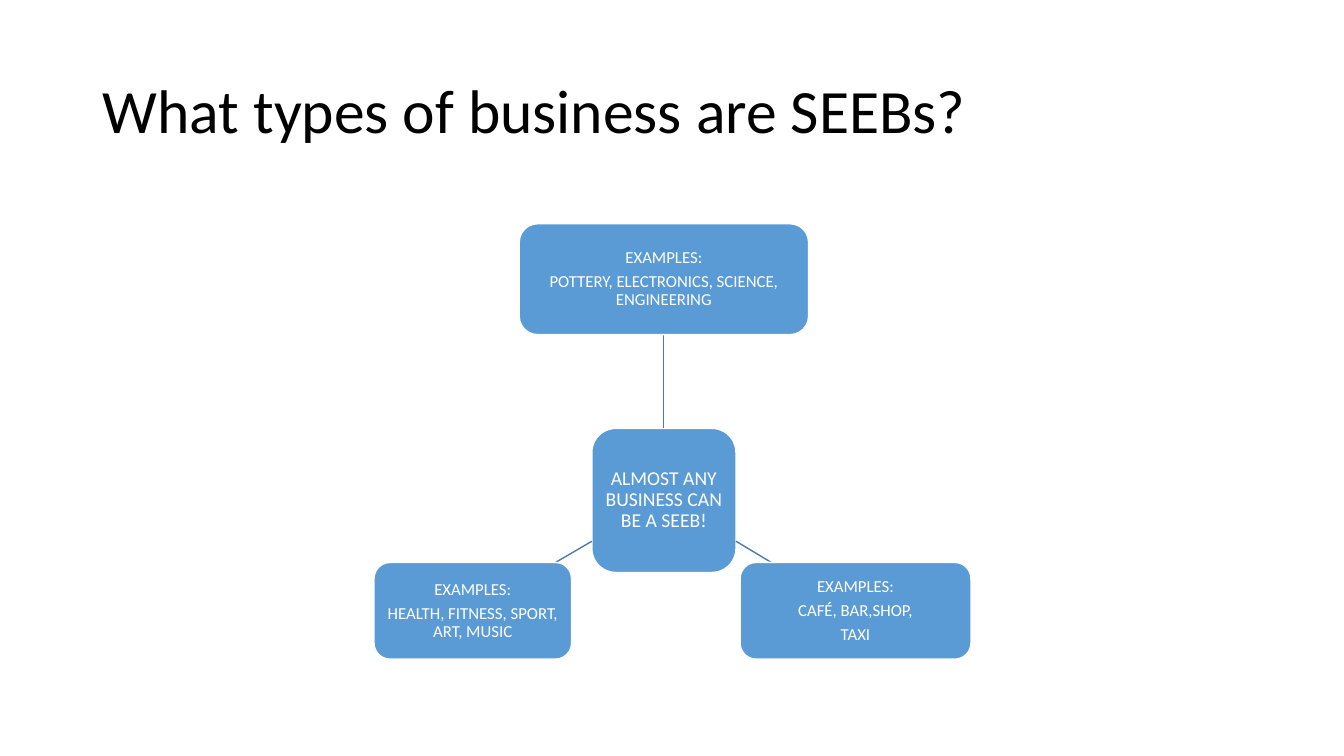
import pptx
import pptx.dml.color
import pptx.enum.shapes
import pptx.enum.text
import pptx.oxml
import pptx.oxml.ns
import pptx.util
from pptx.util import Inches

BLACK = pptx.dml.color.RGBColor(0x00, 0x00, 0x00)
WHITE = pptx.dml.color.RGBColor(0xFF, 0xFF, 0xFF)
BLUE = pptx.dml.color.RGBColor(0x5B, 0x9B, 0xD5)
LINE_BLUE = pptx.dml.color.RGBColor(0x49, 0x7C, 0xAB)

CENTRE = ((5.87, 4.25, 1.43, 1.43), ["ALMOST ANY BUSINESS CAN BE A SEEB!"])
BRANCHES = [
    ((5.15, 2.22, 2.87, 1.1),
     ["EXAMPLES:", "POTTERY, ELECTRONICS, SCIENCE, ENGINEERING"],
     (6.58, 4.25, 6.58, 3.32)),
    ((7.34, 5.58, 2.29, 0.96),
     ["EXAMPLES:", "CAFÉ, BAR,SHOP,", "TAXI"],
     (7.3, 5.37, 7.65, 5.58)),
    ((3.71, 5.58, 1.96, 0.96),
     ["EXAMPLES:", "HEALTH, FITNESS, SPORT, ART, MUSIC"],
     (5.87, 5.37, 5.51, 5.58)),
]


class DiagramSlide:
    font_name = "Calibri"
    line_spacing = 0.9
    space_after_ratio = 0.35

    def __init__(self, presentation):
        self.slide = presentation.slides.add_slide(presentation.slide_layouts[5])

    def fill_text(self, text_frame, lines, size, color, alignment, inset, gap=0):
        frame_format = {
            "word_wrap": True,
            "auto_size": pptx.enum.text.MSO_AUTO_SIZE.NONE,
            "vertical_anchor": pptx.enum.text.MSO_ANCHOR.MIDDLE,
        }
        for side in ("left", "right", "top", "bottom"):
            frame_format[f"margin_{side}"] = Inches(inset)
        for name, value in frame_format.items():
            setattr(text_frame, name, value)
        text_frame.text = "\n".join(lines)
        paragraph_format = {
            "alignment": alignment,
            "line_spacing": self.line_spacing,
            "space_before": pptx.util.Pt(0),
            "space_after": pptx.util.Pt(size * gap),
        }
        font_format = {"name": self.font_name, "size": pptx.util.Pt(size)}
        for paragraph in text_frame.paragraphs:
            for name, value in paragraph_format.items():
                setattr(paragraph, name, value)
            for run in paragraph.runs:
                for name, value in font_format.items():
                    setattr(run.font, name, value)
                run.font.color.rgb = color

    def title(self, text, place):
        shape = self.slide.shapes.title
        for name, value in zip(("left", "top", "width", "height"), place):
            setattr(shape, name, Inches(value))
        self.fill_text(shape.text_frame, [text], 44, BLACK,
                       pptx.enum.text.PP_ALIGN.LEFT, 0.1)

    def box(self, place, lines, size, inset):
        shape = self.slide.shapes.add_shape(
            pptx.enum.shapes.MSO_SHAPE.ROUNDED_RECTANGLE, *map(Inches, place))
        shape.shadow.inherit = False
        shape.fill.solid()
        shape.fill.fore_color.rgb = BLUE
        shape.line.color.rgb = WHITE
        shape.line.width = pptx.util.Pt(1)
        self.fill_text(shape.text_frame, lines, size, WHITE,
                       pptx.enum.text.PP_ALIGN.CENTER, inset,
                       self.space_after_ratio)

    def link(self, ends):
        connector = self.slide.shapes.add_connector(
            pptx.enum.shapes.MSO_CONNECTOR.STRAIGHT, *map(Inches, ends))
        connector.line.color.rgb = LINE_BLUE
        connector.line.width = pptx.util.Pt(1)
        properties = connector.element.find(pptx.oxml.ns.qn("p:spPr"))
        properties.append(pptx.oxml.parse_xml(
            f"<a:effectLst {pptx.oxml.ns.nsdecls('a')}/>"))


def main():
    presentation = pptx.Presentation()
    presentation.slide_width = Inches(13.33)
    presentation.slide_height = Inches(7.5)
    diagram = DiagramSlide(presentation)
    diagram.title("What types of business are SEEBs?", (0.92, 0.4, 11.5, 1.45))
    diagram.box(*CENTRE, size=14, inset=0.04)
    for place, lines, ends in BRANCHES:
        diagram.link(ends)
        diagram.box(place, lines, size=12, inset=0.03)
    presentation.save("out.pptx")


if __name__ == "__main__":
    main()
